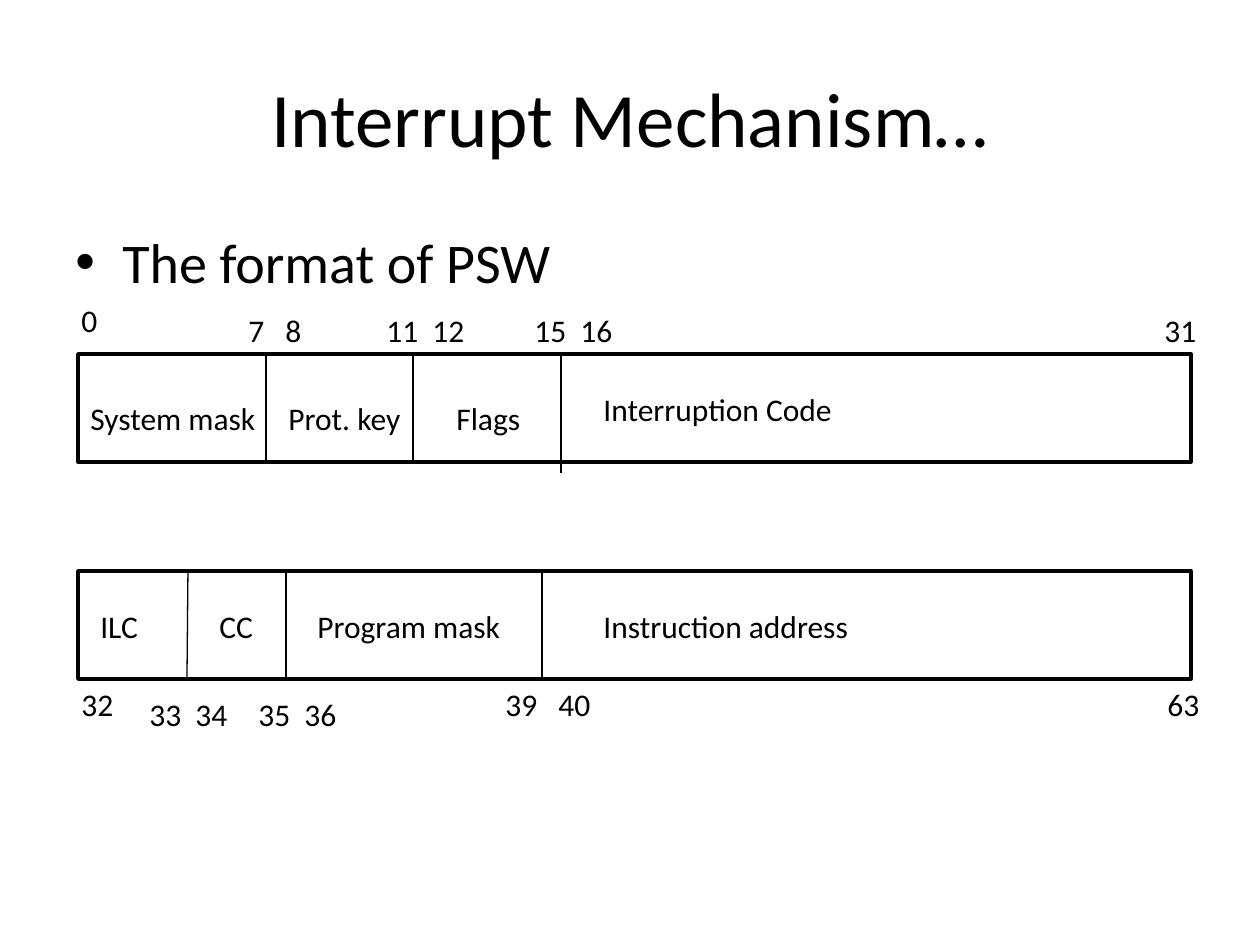
from lxml import etree
from pptx import Presentation
from pptx import util as u
from pptx.dml.color import RGBColor
from pptx.enum import shapes, text
from pptx.oxml.ns import qn


def px(length):
    return u.Inches(length / 126)


def color(hex_string):
    return RGBColor.from_string(hex_string)


class PswSlide:
    font = "Calibri"
    ink = "000000"

    def __init__(self, deck):
        self.slide = deck.slides.add_slide(deck.slide_layouts[6])

    def label(self, wording, left, top, width, height=50, size=18, wrap=False,
              align=text.PP_ALIGN.LEFT, anchor=text.MSO_ANCHOR.TOP,
              bullet=None, indent=0, tab=None):
        box = self.slide.shapes.add_textbox(px(left), px(top), px(width), px(height))
        frame = box.text_frame
        frame.word_wrap = wrap
        frame.vertical_anchor = anchor
        paragraph = frame.paragraphs[0]
        paragraph.alignment = align
        run = paragraph.add_run()
        run.text = wording
        run.font.name = self.font
        run.font.size = u.Pt(size)
        run.font.color.rgb = color(self.ink)
        props = paragraph._p.get_or_add_pPr()
        if bullet:
            props.set("marL", str(px(indent)))
            props.set("indent", str(-px(indent)))
            etree.SubElement(props, qn("a:buFont"), typeface="Arial")
            etree.SubElement(props, qn("a:buChar"), char=bullet)
        if tab:
            stops = etree.SubElement(props, qn("a:tabLst"))
            etree.SubElement(stops, qn("a:tab"), pos=str(px(tab)), algn="l")

    def word_frame(self, top):
        outline = self.slide.shapes.add_shape(
            shapes.MSO_SHAPE.RECTANGLE, px(78), px(top), px(1113), px(108))
        outline.shadow.inherit = False
        outline.fill.background()
        outline.line.color.rgb = color(self.ink)
        outline.line.width = u.Pt(2)

    def divider(self, x, top, end_x, bottom):
        edge = self.slide.shapes.add_connector(
            shapes.MSO_CONNECTOR.STRAIGHT, px(x), px(top), px(end_x), px(bottom))
        edge.line.color.rgb = color(self.ink)
        edge.line.width = u.Pt(0.75)
        etree.SubElement(edge._element.spPr, qn("a:effectLst"))


def main():
    deck = Presentation()
    deck.slide_width, deck.slide_height = px(1260), px(945)
    psw = PswSlide(deck)

    psw.label("Interrupt Mechanism…", 63, 38, 1134, 158, size=44, wrap=True,
              align=text.PP_ALIGN.CENTER, anchor=text.MSO_ANCHOR.MIDDLE)
    psw.label("The format of PSW", 63, 221, 1134, 624, size=32, wrap=True,
              bullet="•", indent=47)

    first_word, second_word = 354, 571
    for top in (first_word, second_word):
        psw.word_frame(top)

    for x, bottom in ((266, 462), (413, 462), (561, 473)):
        psw.divider(x, first_word, x, bottom)
    for x, end_x in ((188, 187), (286, 286), (542, 542)):
        psw.divider(x, second_word, end_x, second_word + 108)

    fields = (
        ("System mask", 78, 393, 192),
        ("Prot. key", 276, 393, 139),
        ("Flags", 444, 393, 89),
        ("Interruption Code", 591, 384, 257),
        ("ILC", 88, 601, 63),
        ("CC", 207, 601, 59),
        ("Program mask", 305, 601, 210),
        ("Instruction address", 591, 601, 273),
    )
    for name, left, top, width in fields:
        psw.label(name, left, top, width)

    bit_numbers = (
        ("0", 69, 295, 42, None),
        ("7\t8", 236, 305, 79, 37),
        ("11\t12", 374, 305, 105, 46),
        ("15\t16", 522, 305, 105, 46),
        ("31", 1152, 305, 58, None),
        ("32", 69, 679, 58, None),
        ("33\t34", 137, 689, 105, 46),
        ("35\t36", 246, 689, 105, 46),
        ("39\t40", 493, 679, 112, 53),
        ("63", 1155, 679, 58, None),
    )
    for bits, left, top, width, tab in bit_numbers:
        psw.label(bits, left, top, width, tab=tab)

    deck.save("out.pptx")


if __name__ == "__main__":
    main()
